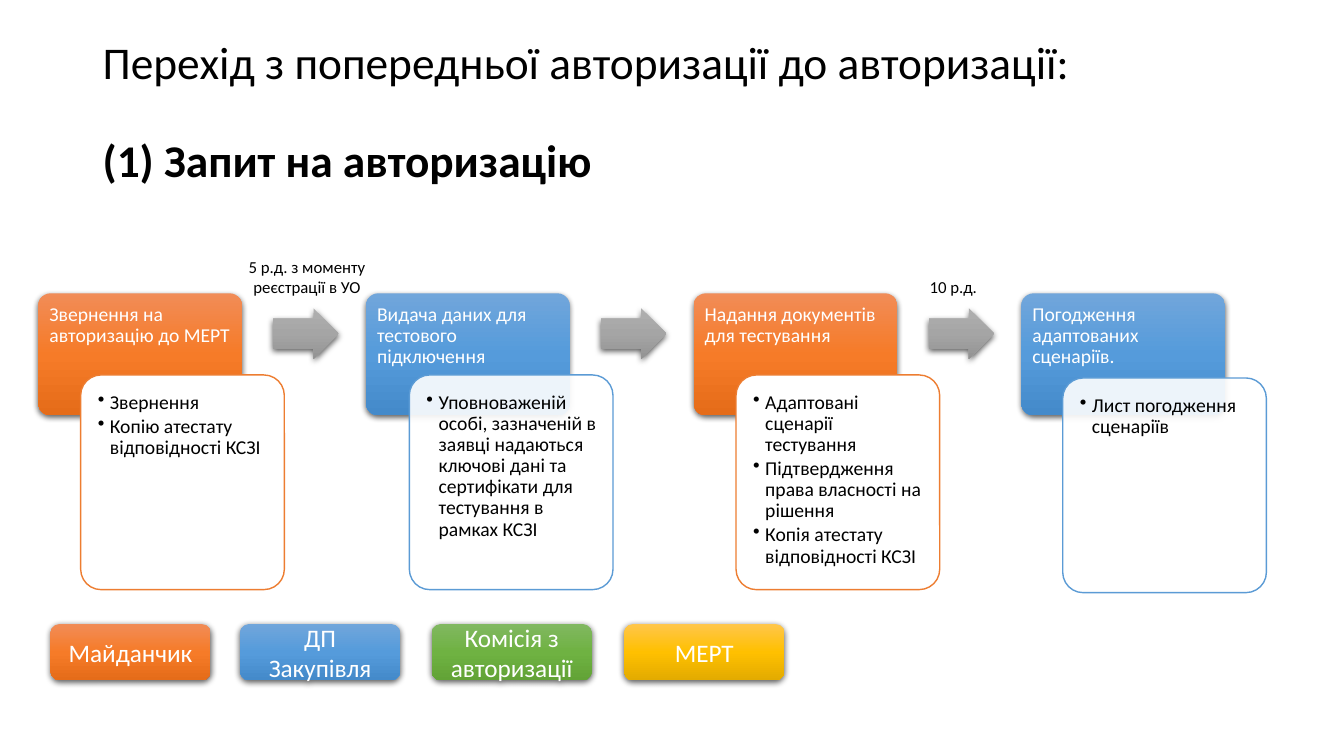
from copy import deepcopy
from dataclasses import dataclass

from lxml import etree
from pptx import Presentation
from pptx.dml.color import RGBColor
from pptx.enum.shapes import MSO_SHAPE as Preset
from pptx.enum.text import MSO_ANCHOR as Anchor, PP_ALIGN as Align
from pptx.oxml.ns import qn
from pptx.util import Inches, Pt

ORANGE = ("F18C57", "F67B28", "E56C19")
BLUE = ("71A6DB", "559BDB", "448ACA")
GREEN = ("81B861", "6FB242", "62A336")
YELLOW = ("FFC64B", "FFC000", "E3AB00")
GRAY = ("AFAFAF", "A5A5A5", "939393")
ORANGE_LINE, BLUE_LINE = "ED7D31", "5B9BD5"
BLACK, WHITE = "000000", "FFFFFF"

STEP_LEFT, STEP_PITCH = 0.38, 3.25
STEPS = [
    ("Звернення на авторизацію до МЕРТ", ORANGE, ORANGE_LINE, 100, 0.80, 3.72,
     ["Звернення", "Копію атестату відповідності КСЗІ"]),
    ("Видача даних для тестового підключення", BLUE, BLUE_LINE, 90, 4.06, 3.72,
     ["Уповноваженій особі, зазначеній в заявці надаються ключові дані "
      "та сертифікати для тестування в рамках КСЗІ"]),
    ("Надання документів для тестування", ORANGE, ORANGE_LINE, 100, 7.30, 3.72,
     ["Адаптовані сценарії тестування", "Підтвердження права власності на рішення",
      "Копія атестату відповідності КСЗІ"]),
    ("Погодження адаптованих сценаріїв.", BLUE, BLUE_LINE, 90, 10.54, 3.75,
     ["Лист погодження сценаріїв"]),
]
LEGEND = [
    (0.50, "Майданчик", ORANGE),
    (2.38, "ДП Закупівля", BLUE),
    (4.28, "Комісія з авторизації", GREEN),
    (6.19, "МЕРТ", YELLOW),
]


def color(value):
    return RGBColor.from_string(value)


@dataclass
class SlideBuilder:
    """Draws the elements of one slide in a shared style."""
    slide: object
    font: str = "Calibri"

    def shape(self, preset, left, top, width, height, adjustments=()):
        shape = self.slide.shapes.add_shape(
            preset, Inches(left), Inches(top), Inches(width), Inches(height))
        for index, value in enumerate(adjustments):
            shape.adjustments[index] = value
        shape.shadow.inherit = False
        return shape

    def glossy(self, preset, box, stops, adjustments=()):
        shape = self.shape(preset, *box, adjustments)
        shape.line.fill.background()
        shape.fill.gradient()
        shape.fill.gradient_angle = 270
        properties = shape._element.spPr
        stop_list = properties.find(qn("a:gradFill")).find(qn("a:gsLst"))
        stop_list.insert(1, deepcopy(stop_list[0]))
        for stop, position, value in zip(shape.fill.gradient_stops, (0, 0.5, 1), stops):
            stop.position = position
            stop.color.rgb = color(value)
        shadow = etree.SubElement(
            properties.find(qn("a:effectLst")), qn("a:outerShdw"),
            blurRad=str(Pt(4.5)), dist=str(Pt(1.5)), dir="5400000",
            algn="ctr", rotWithShape="0")
        black = etree.SubElement(shadow, qn("a:srgbClr"), val=BLACK)
        etree.SubElement(black, qn("a:alpha"), val="63000")
        return shape

    def panel(self, box, line, opacity):
        shape = self.shape(Preset.ROUNDED_RECTANGLE, *box, (0.1,))
        shape.fill.solid()
        shape.fill.fore_color.rgb = color(WHITE)
        if opacity < 100:
            white = shape._element.spPr.find(qn("a:solidFill"))[0]
            etree.SubElement(white, qn("a:alpha"), val=str(opacity * 1000))
        shape.line.color.rgb = color(line)
        shape.line.width = Pt(1)

    def fill_text(self, shape, texts, size, text_color=BLACK, align=Align.LEFT,
                  anchor=Anchor.TOP, insets=(0.1, 0.05, 0.1, 0.05), spacing=1.0, after=0):
        frame = shape.text_frame
        frame.word_wrap = True
        frame.vertical_anchor = anchor
        (frame.margin_left, frame.margin_top,
         frame.margin_right, frame.margin_bottom) = map(Inches, insets)
        frame.text = "\n".join(texts)
        for paragraph in frame.paragraphs:
            paragraph.alignment = align
            paragraph.line_spacing = spacing
            paragraph.space_after = Pt(after)
            paragraph.font.name = self.font
            paragraph.font.size = Pt(size)
            paragraph.font.color.rgb = color(text_color)
        return frame.paragraphs

    def text(self, box, texts, size, **style):
        shape = self.slide.shapes.add_textbox(*map(Inches, box))
        return self.fill_text(shape, texts, size, **style)

    def bullets(self, box, items):
        for paragraph in self.text(box, items, 14, insets=(0.11,) * 4,
                                   spacing=0.9, after=2):
            properties = paragraph._p.get_or_add_pPr()
            properties.set("marL", str(Inches(0.12)))
            properties.set("indent", str(-Inches(0.12)))
            bullet = etree.Element(qn("a:buChar"), char="•")
            properties.find(qn("a:spcAft")).addnext(bullet)

    def step(self, left, heading, stops, line, opacity, panel_left, panel_top, items):
        self.glossy(Preset.ROUNDED_RECTANGLE, (left, 2.91, 2.02, 1.21), stops, (0.1,))
        self.text((left, 2.91, 2.02, 0.81), [heading], 14, text_color=WHITE,
                  insets=(0.11, 0.11, 0.11, 0.06), spacing=0.9, after=5)
        self.panel((panel_left, panel_top, 2.02, 2.13), line, opacity)
        self.bullets((panel_left + 0.06, panel_top + 0.06, 1.91, 2.01), items)


def main():
    presentation = Presentation()
    presentation.slide_width = Inches(13.33)
    presentation.slide_height = Inches(7.5)
    builder = SlideBuilder(presentation.slides.add_slide(presentation.slide_layouts[6]))

    title = builder.text(
        (0.92, 0.4, 11.5, 1.45),
        ["Перехід з попередньої авторизації до авторизації:", "(1) Запит на авторизацію"],
        32.4, anchor=Anchor.MIDDLE, spacing=0.9)
    title[1].space_before = Pt(35)
    title[1].font.bold = True

    for index, step in enumerate(STEPS):
        left = STEP_LEFT + index * STEP_PITCH
        builder.step(left, *step)
        if index < len(STEPS) - 1:
            builder.glossy(Preset.RIGHT_ARROW, (left + 2.33, 3.06, 0.65, 0.5),
                           GRAY, (0.6, 0.5))

    builder.text((2.2, 2.5, 1.69, 0.5), ["5 р.д. з моменту реєстрації в УО"], 12,
                 align=Align.CENTER)
    builder.text((8.61, 2.7, 1.69, 0.3), ["10 р.д."], 12, align=Align.CENTER)

    for left, label, stops in LEGEND:
        button = builder.glossy(Preset.ROUNDED_RECTANGLE, (left, 6.19, 1.59, 0.56), stops)
        builder.fill_text(button, [label], 18, text_color=WHITE, align=Align.CENTER,
                          anchor=Anchor.MIDDLE)

    presentation.save("out.pptx")


if __name__ == "__main__":
    main()
